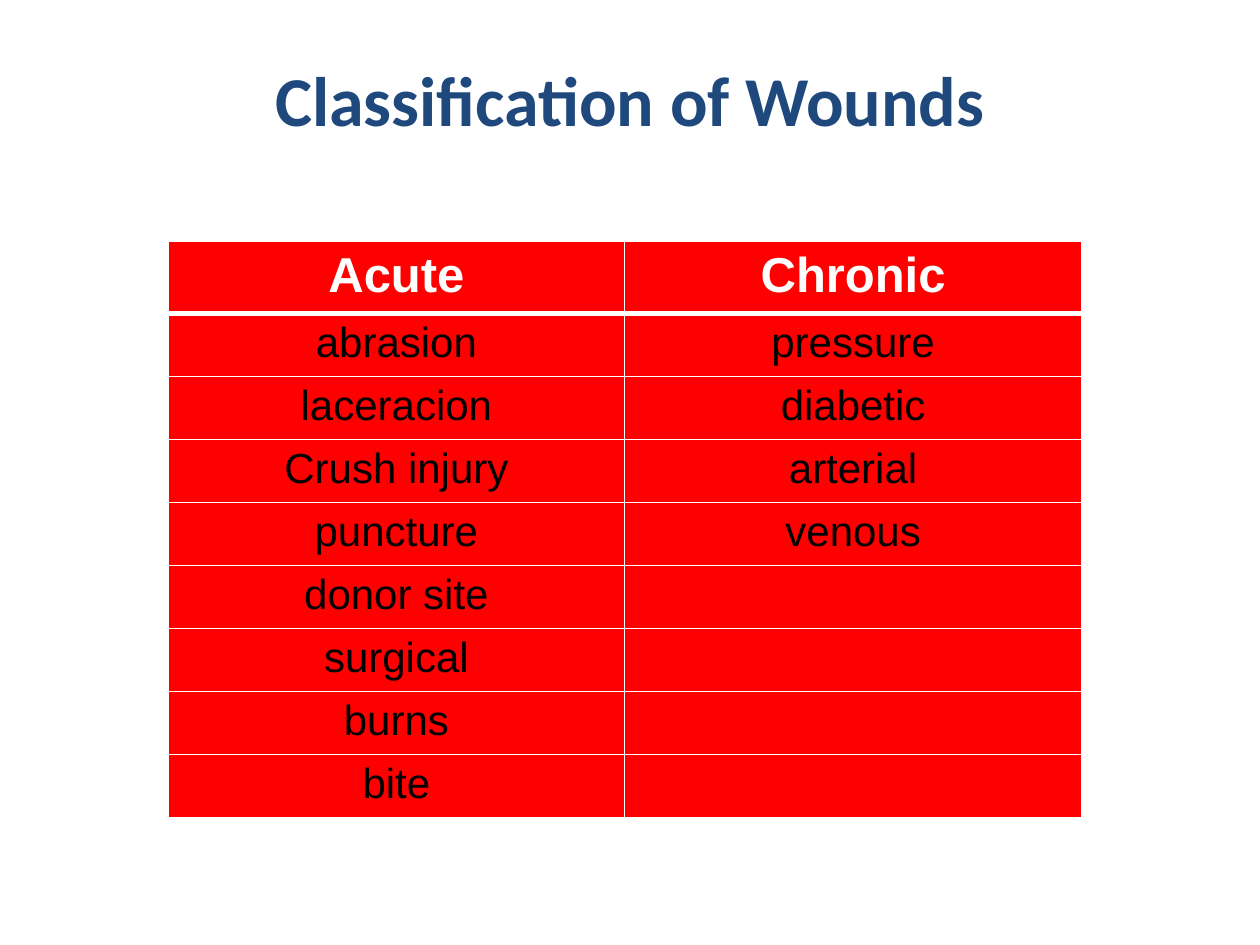
import itertools

import pptx
import pptx.dml.color
import pptx.enum.text
import pptx.oxml
import pptx.oxml.ns
import pptx.util

Pt = pptx.util.Pt
COLORS = {"title": "1F497D", "cell": "FF0000", "border": "FFFFFF",
          "header": "FFFFFF", "body": "000000"}
HEADER_HEIGHT, ROW_HEIGHT, COLUMN_WIDTH = 41, 36, 261


def write(frame, text, size, color, font="Arial", bold=False):
    paragraph = frame.paragraphs[0]
    paragraph.alignment = pptx.enum.text.PP_ALIGN.CENTER
    run = paragraph.add_run()
    run.text = text
    run.font.name = font
    run.font.size = Pt(size)
    run.font.bold = bold
    run.font.color.rgb = pptx.dml.color.RGBColor.from_string(COLORS[color])


def add_border(cell, side, width):
    """Draw one side (L, R, T or B) of a cell; call before filling the cell."""
    cell._tc.get_or_add_tcPr().append(pptx.oxml.parse_xml(
        f'<a:ln{side} {pptx.oxml.ns.nsdecls("a")} w="{Pt(width)}"><a:solidFill>'
        f'<a:srgbClr val="{COLORS["border"]}"/></a:solidFill></a:ln{side}>'))


presentation = pptx.Presentation()
presentation.slide_width, presentation.slide_height = Pt(720), Pt(540)
slide = presentation.slides.add_slide(presentation.slide_layouts[6])

title = slide.shapes.add_textbox(Pt(54), Pt(-6), Pt(612), Pt(90)).text_frame
title.word_wrap = True
title.vertical_anchor = pptx.enum.text.MSO_ANCHOR.BOTTOM
write(title, "Classification of Wounds", size=40, color="title", font="Calibri", bold=True)

acute = ["Acute", "abrasion", "laceracion", "Crush injury", "puncture",
         "donor site", "surgical", "burns", "bite"]
chronic = ["Chronic", "pressure", "diabetic", "arterial", "venous"]
wound_rows = list(itertools.zip_longest(acute, chronic, fillvalue=""))

wounds = slide.shapes.add_table(
    len(wound_rows), 2, Pt(96), Pt(138), Pt(2 * COLUMN_WIDTH),
    Pt(HEADER_HEIGHT + ROW_HEIGHT * (len(wound_rows) - 1))).table
for column in wounds.columns:
    column.width = Pt(COLUMN_WIDTH)

for row, names in enumerate(wound_rows):
    is_header = row == 0
    wounds.rows[row].height = Pt(HEADER_HEIGHT if is_header else ROW_HEIGHT)
    for column, name in enumerate(names):
        cell = wounds.cell(row, column)
        add_border(cell, "L", 1)
        add_border(cell, "R", 1)
        add_border(cell, "T", 3 if row == 1 else 1)
        add_border(cell, "B", 3 if is_header else 1)
        cell.fill.solid()
        cell.fill.fore_color.rgb = pptx.dml.color.RGBColor.from_string(COLORS["cell"])
        if name:
            write(cell.text_frame, name, size=28 if is_header else 24,
                  color="header" if is_header else "body", bold=is_header)

presentation.save("out.pptx")
